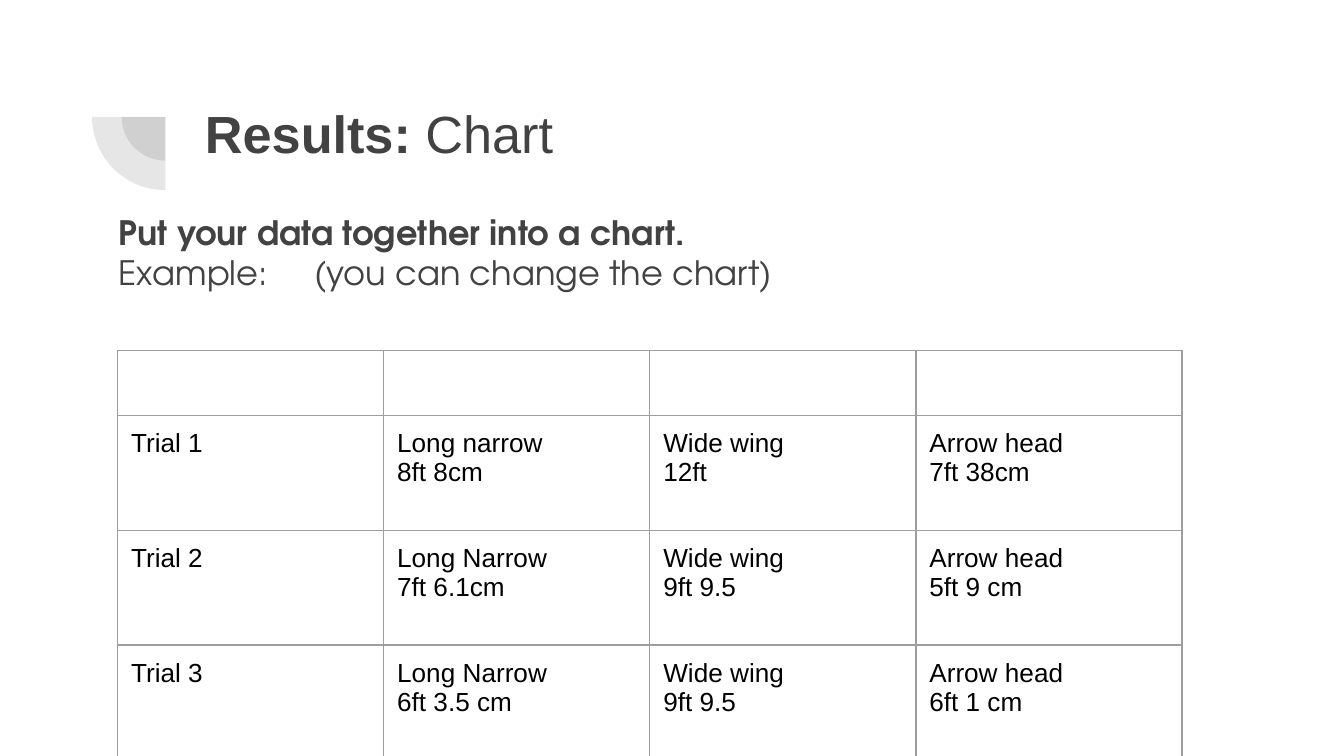
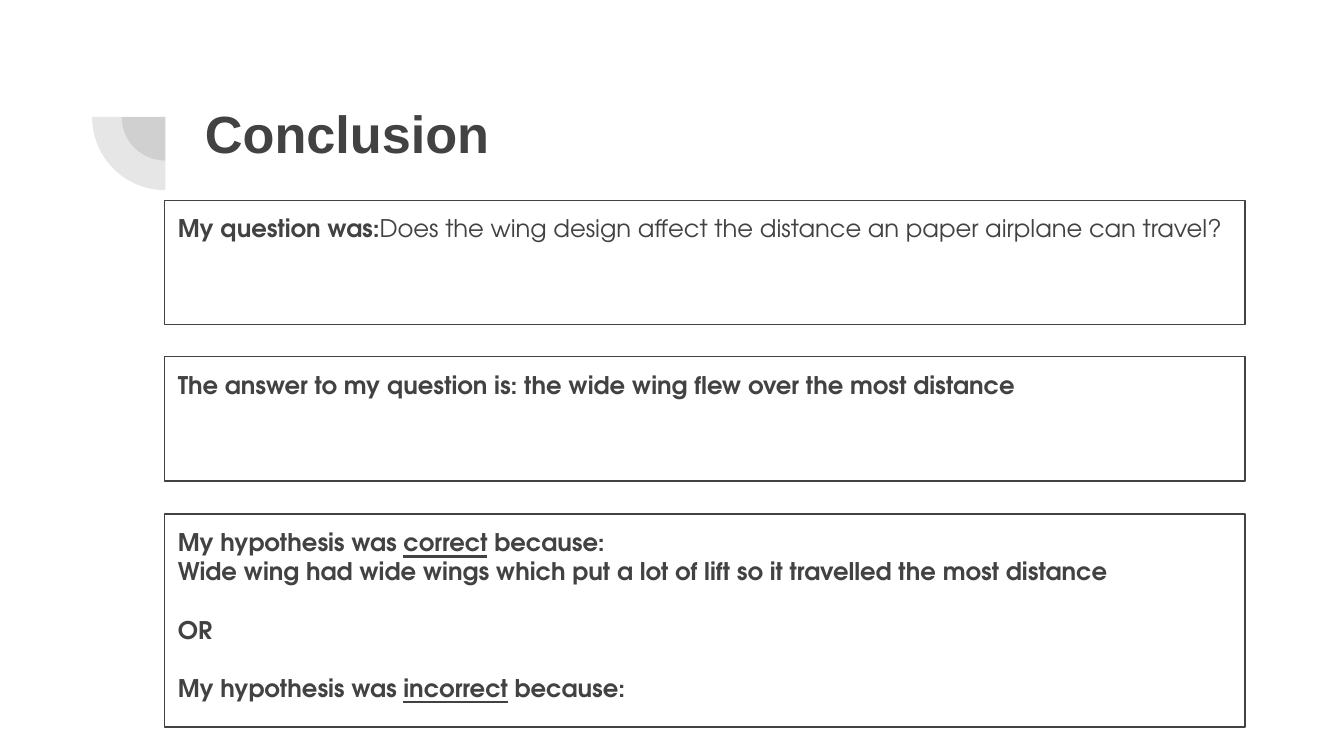
from dataclasses import dataclass

from pptx import Presentation
from pptx.dml.color import RGBColor
from pptx.enum.shapes import MSO_SHAPE as Shape
from pptx.enum.text import MSO_ANCHOR as Anchor, MSO_AUTO_SIZE as AutoSize, PP_ALIGN as Align
from pptx.oxml.ns import qn
from pptx.util import Emu, Pt
from lxml.etree import SubElement


@dataclass(frozen=True)
class Theme:
    ink: str = "424242"
    table_ink: str = "000000"
    grid: str = "9E9E9E"
    heading_font: str = "Arial"
    body_font: str = "TeX Gyre Adventor"
    title_size: int = 28
    intro_size: int = 18
    table_size: int = 14
    box_size: int = 13
    line_width: float = 0.75
    pie_alpha: int = 13


theme = Theme()


def px(*lengths):
    return [Emu(length * 4572) for length in lengths]


def write(frame, lines, *, size, font=theme.body_font, color=theme.ink, gaps=(), inset=True):
    if inset:
        frame.margin_left, frame.margin_top, frame.margin_right, frame.margin_bottom = px(20, 20, 20, 20)
        frame.word_wrap = True
        frame.auto_size = AutoSize.NONE
        frame.vertical_anchor = Anchor.TOP
    for index, line in enumerate(lines):
        paragraph = frame.paragraphs[0] if index == 0 else frame.add_paragraph()
        paragraph.alignment = Align.LEFT
        paragraph.space_before = Pt(size * 1.2 if index in gaps else 0)
        for text, style in line:
            run = paragraph.add_run()
            run.text = text
            run.font.size = Pt(size)
            run.font.name = font
            run.font.bold = "b" in style
            run.font.underline = "u" in style
            run.font.color.rgb = RGBColor.from_string(color)


deck = Presentation()
deck.slide_width, deck.slide_height = px(2000, 1125)
layout = deck.slide_layouts[5]
results = deck.slides.add_slide(layout)
conclusion = deck.slides.add_slide(layout)

for left, top, side in ((181, 109, 130), (137, 65, 218)):
    quarter = results.shapes.add_shape(Shape.PIE, *px(left, top, side, side))
    quarter.adjustments[0], quarter.adjustments[1] = 107.928, 162
    quarter.rotation = 270
    quarter.shadow.inherit = False
    quarter.fill.solid()
    quarter.fill.fore_color.rgb = RGBColor.from_string(theme.ink)
    quarter.line.fill.background()
    for tint in quarter.element.iter(qn("a:srgbClr")):
        SubElement(tint, qn("a:alpha"), val=str(theme.pie_alpha * 1000))
    layout.shapes.element.append(quarter.element)

for slide, height, heading in (
    (results, 218, [("Results: ", "b"), ("Chart", "")]),
    (conclusion, 162, [("Conclusion", "b")]),
):
    title = slide.shapes.title
    title.left, title.top, title.width, title.height = px(285, 130, 1538, height)
    write(title.text_frame, [heading], size=theme.title_size, font=theme.heading_font)

intro = results.shapes.add_textbox(*px(157, 295, 1688, 162)).text_frame
write(
    intro,
    [[("Put your data together into a chart.", "b")], [("Example:\t(you can change the chart)", "")]],
    size=theme.intro_size,
)
tab_stops = SubElement(intro.paragraphs[1]._p.get_or_add_pPr(), qn("a:tabLst"))
SubElement(tab_stops, qn("a:tab"), pos=str(px(291)[0]), algn="l")

trials = [
    ["", "", "", ""],
    ["Trial 1", "Long narrow\n8ft 8cm", "Wide wing\n12ft", "Arrow head\n7ft 38cm"],
    ["Trial 2", "Long Narrow\n7ft 6.1cm", "Wide wing\n9ft 9.5", "Arrow head\n5ft 9 cm"],
    ["Trial 3", "Long Narrow\n6ft 3.5 cm", "Wide wing\n9ft 9.5", "Arrow head\n6ft 1 cm"],
]
distances = results.shapes.add_table(4, 4, *px(175, 522, 1584, 609)).table
distances.first_row = distances.horz_banding = False
for column in distances.columns:
    column.width = px(396)[0]
for row, height, entries in zip(distances.rows, px(96, 171, 171, 171), trials):
    row.height = height
    for cell, entry in zip(row.cells, entries):
        properties = cell._tc.get_or_add_tcPr()
        for edge in ("a:lnL", "a:lnR", "a:lnT", "a:lnB"):
            border = SubElement(properties, qn(edge), w=str(Pt(theme.line_width)))
            SubElement(SubElement(border, qn("a:solidFill")), qn("a:srgbClr"), val=theme.grid)
        cell.fill.background()
        if entry:
            cell.margin_left, cell.margin_top, cell.margin_right, cell.margin_bottom = px(20, 20, 20, 20)
            write(
                cell.text_frame,
                [[(line, "")] for line in entry.split("\n")],
                size=theme.table_size,
                font=theme.heading_font,
                color=theme.table_ink,
                inset=False,
            )

question = [
    [
        ("My question was:", "b"),
        ("Does the wing design affect the distance an paper airplane can travel?", ""),
    ]
]
answer = [[("The answer to my question is: the wide wing flew over the most distance", "b")]]
hypothesis = [
    [("My hypothesis was ", "b"), ("correct", "bu"), (" because:", "b")],
    [("Wide wing had wide wings which put a lot of lift so it travelled the most distance", "b")],
    [("OR", "b")],
    [("My hypothesis was ", "b"), ("incorrect", "bu"), (" because:", "b")],
]
for top, height, lines in ((298, 185, question), (531, 185, answer), (765, 317, hypothesis)):
    box = conclusion.shapes.add_shape(Shape.RECTANGLE, *px(245, top, 1608, height))
    box.shadow.inherit = False
    box.fill.background()
    box.line.color.rgb = RGBColor.from_string(theme.ink)
    box.line.width = Pt(theme.line_width)
    write(box.text_frame, lines, size=theme.box_size, gaps=(2, 3))

deck.save("out.pptx")
